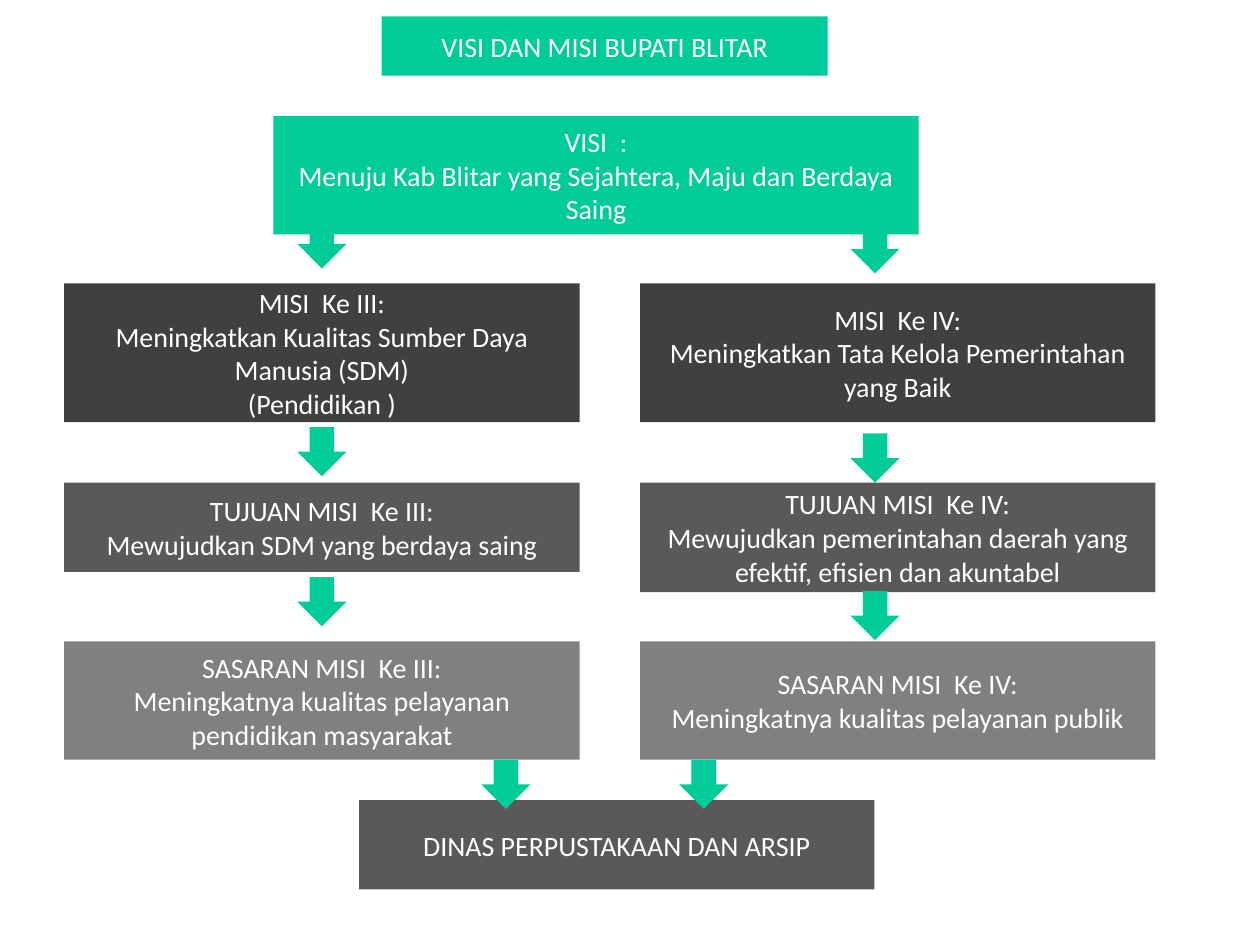
from dataclasses import dataclass

from pptx import Presentation
from pptx.dml.color import RGBColor as Rgb
from pptx.enum.shapes import MSO_SHAPE as Shape
from pptx.enum.text import MSO_ANCHOR as Anchor, PP_ALIGN as Align
from pptx.util import Inches, Pt


@dataclass(frozen=True)
class Theme:
    """Colours, type and grid measures of the slide."""
    accent: str = "00CC99"
    mission: str = "404040"
    goal: str = "595959"
    target: str = "808080"
    ink: str = "FFFFFF"
    font: str = "Calibri"
    size: int = 16
    columns: tuple = (0.51, 5.08)
    rows: tuple = (2.25, 3.83, 5.09)
    column_width: float = 4.09
    arrow: float = 0.39


THEME = Theme()

MISSIONS = (
    ("III", 2.36, (1.74, 3.39, 4.58), (
        (1.1, ("Meningkatkan Kualitas Sumber Daya Manusia (SDM)", "(Pendidikan )")),
        (0.71, ("Mewujudkan SDM yang berdaya saing",)),
        (0.94, ("Meningkatnya kualitas pelayanan pendidikan masyarakat",)))),
    ("IV", 6.75, (1.78, 3.44, 4.69), (
        (1.1, ("Meningkatkan Tata Kelola Pemerintahan yang Baik",)),
        (0.87, ("Mewujudkan pemerintahan daerah yang efektif, efisien dan akuntabel",)),
        (0.94, ("Meningkatnya kualitas pelayanan publik",)))),
)
LEVELS = (("MISI", THEME.mission), ("TUJUAN MISI", THEME.goal), ("SASARAN MISI", THEME.target))


def add_block(slide, kind, area, fill):
    """Add a flat preset shape with a solid fill."""
    block = slide.shapes.add_shape(kind, *map(Inches, area))
    block.shadow.inherit = False
    block.fill.solid()
    block.fill.fore_color.rgb = Rgb.from_string(fill)
    block.line.fill.background()
    return block


def write(frame, lines, size=THEME.size, color=THEME.ink, align=Align.CENTER):
    """Write one paragraph per line into a text frame."""
    frame.word_wrap = True
    frame.vertical_anchor = Anchor.MIDDLE
    for index, line in enumerate(lines):
        paragraph = frame.paragraphs[0] if index == 0 else frame.add_paragraph()
        paragraph.alignment = align
        run = paragraph.add_run()
        run.text = line
        run.font.name = THEME.font
        run.font.size = Pt(size)
        run.font.color.rgb = Rgb.from_string(color)


def add_box(slide, area, fill, *lines):
    """Add a filled rectangle with centred text."""
    write(add_block(slide, Shape.RECTANGLE, area, fill).text_frame, lines)


def add_arrow(slide, left, top):
    """Add a square down arrow in the accent colour."""
    add_block(slide, Shape.DOWN_ARROW, (left, top, THEME.arrow, THEME.arrow), THEME.accent)


def add_mission(slide, column, number, arrow_left, arrow_tops, steps):
    """Add one mission column with the arrow leading into each step."""
    for (level, fill), row, (height, lines) in zip(LEVELS, THEME.rows, steps):
        area = (column, row, THEME.column_width, height)
        add_box(slide, area, fill, f"{level}  Ke {number}:", *lines)
    for top in arrow_tops:
        add_arrow(slide, arrow_left, top)


def main():
    """Build the vision and mission flow and save it."""
    deck = Presentation()
    deck.slide_width, deck.slide_height = Inches(10), Inches(7.5)
    slide = deck.slides.add_slide(deck.slide_layouts[6])

    add_box(slide, (3.03, 0.13, 3.54, 0.47), THEME.accent, "VISI DAN MISI BUPATI BLITAR")
    add_box(slide, (2.17, 0.92, 5.12, 0.94), THEME.accent,
            "VISI  :", "Menuju Kab Blitar yang Sejahtera, Maju dan Berdaya Saing")
    for column, mission in zip(THEME.columns, MISSIONS):
        add_mission(slide, column, *mission)
    add_box(slide, (2.85, 6.35, THEME.column_width, 0.71), THEME.goal,
            "DINAS PERPUSTAKAAN DAN ARSIP")
    for left in (3.82, 5.39):
        add_arrow(slide, left, 6.03)

    deck.save("out.pptx")


if __name__ == "__main__":
    main()
